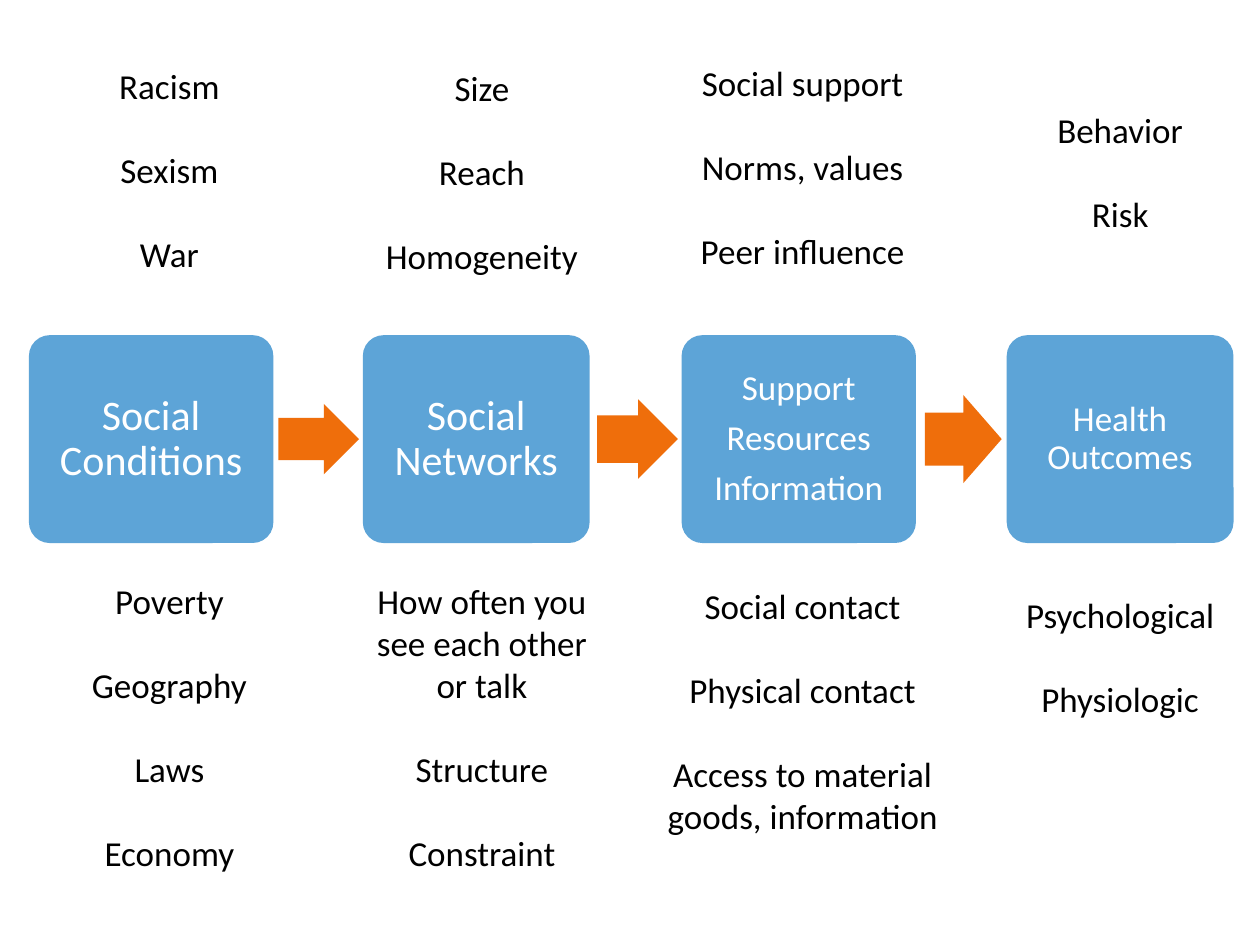
import pptx
import pptx.util
import pptx.dml.color
import pptx.enum.shapes
import pptx.enum.text
from pptx.util import Inches

BLUE = pptx.dml.color.RGBColor(0x5D, 0xA4, 0xD7)
ORANGE = pptx.dml.color.RGBColor(0xEF, 0x6E, 0x0B)
WHITE = pptx.dml.color.RGBColor(0xFF, 0xFF, 0xFF)
BLACK = pptx.dml.color.RGBColor(0x00, 0x00, 0x00)

STAGE_TOP, STAGE_HEIGHT = 2.66, 1.65
STAGES = [
    (0.23, 1.94, 24, 0.1, ["Social Conditions"]),
    (2.88, 1.8, 24, 0.1, ["Social Networks"]),
    (5.41, 1.86, 20, 0.08, ["Support", "Resources", "Information"]),
    (7.99, 1.8, 20, 0.08, ["Health Outcomes"]),
]
ARROWS = [(2.21, 0.64, 0.56), (4.74, 0.64, 0.63), (7.34, 0.61, 0.7)]
FACTORS = [
    (0.41, 0.46, 1.87, 1.78, ["Racism", "Sexism", "War"]),
    (2.74, 0.48, 2.17, 1.78, ["Size", "Reach", "Homogeneity"]),
    (5.11, 0.44, 2.52, 1.78, ["Social support", "Norms, values", "Peer influence"]),
    (7.78, 0.81, 2.22, 1.11, ["Behavior", "Risk"]),
    (0.41, 4.55, 1.87, 2.46, ["Poverty", "Geography", "Laws", "Economy"]),
    (2.74, 4.55, 2.17, 2.46,
     ["How often you see each other or talk", "Structure", "Constraint"]),
    (5.11, 4.59, 2.52, 2.12,
     ["Social contact", "Physical contact", "Access to material goods, information"]),
    (7.78, 4.66, 2.22, 1.45, ["Psychological", "Physiologic"]),
]


def write_text(frame, lines, *, size, color, line_spacing=1.0, before=0, after=0):
    """Write centred paragraphs into a text frame."""
    frame.word_wrap = True
    for index, line in enumerate(lines):
        paragraph = frame.add_paragraph() if index else frame.paragraphs[0]
        paragraph.text = line
        paragraph.alignment = pptx.enum.text.PP_ALIGN.CENTER
        paragraph.line_spacing = line_spacing
        paragraph.space_before = pptx.util.Pt(before if index else 0)
        paragraph.space_after = pptx.util.Pt(after)
        paragraph.font.name = "Calibri"
        paragraph.font.size = pptx.util.Pt(size)
        paragraph.font.color.rgb = color


def add_filled_shape(slide, kind, box, color, adjustments):
    """Add a flat preset shape without outline."""
    shape = slide.shapes.add_shape(kind, *map(Inches, box))
    shape.shadow.inherit = False
    shape.fill.solid()
    shape.fill.fore_color.rgb = color
    shape.line.fill.background()
    for index, value in enumerate(adjustments):
        shape.adjustments[index] = value
    return shape


def add_stage(slide, box, lines, size, margin):
    """Add one rounded stage of the process with its label."""
    rounded = pptx.enum.shapes.MSO_SHAPE.ROUNDED_RECTANGLE
    frame = add_filled_shape(slide, rounded, box, BLUE, [0.1]).text_frame
    frame.margin_left = frame.margin_right = Inches(margin)
    frame.margin_top = frame.margin_bottom = Inches(margin)
    frame.vertical_anchor = pptx.enum.text.MSO_ANCHOR.MIDDLE
    write_text(frame, lines, size=size, color=WHITE, line_spacing=0.9,
               after=0.35 * size)


def add_process(slide, top, height):
    """Add the row of stages and the arrows centred between them."""
    for left, width, size, margin, lines in STAGES:
        add_stage(slide, (left, top, width, height), lines, size, margin)
    for left, width, arrow_height in ARROWS:
        box = (left, top + (height - arrow_height) / 2, width, arrow_height)
        add_filled_shape(slide, pptx.enum.shapes.MSO_SHAPE.RIGHT_ARROW, box,
                         ORANGE, [0.6, 0.5])


def add_factors(slide, box, lines):
    """Add one list of factors, spaced a full line apart."""
    frame = slide.shapes.add_textbox(*map(Inches, box)).text_frame
    write_text(frame, lines, size=20, color=BLACK, before=24)


def main():
    """Build and save the slide."""
    presentation = pptx.Presentation()
    presentation.slide_width = Inches(10)
    presentation.slide_height = Inches(7.5)
    slide = presentation.slides.add_slide(presentation.slide_layouts[6])
    add_process(slide, STAGE_TOP, STAGE_HEIGHT)
    for *box, lines in FACTORS:
        add_factors(slide, box, lines)
    presentation.save("out.pptx")


if __name__ == "__main__":
    main()
